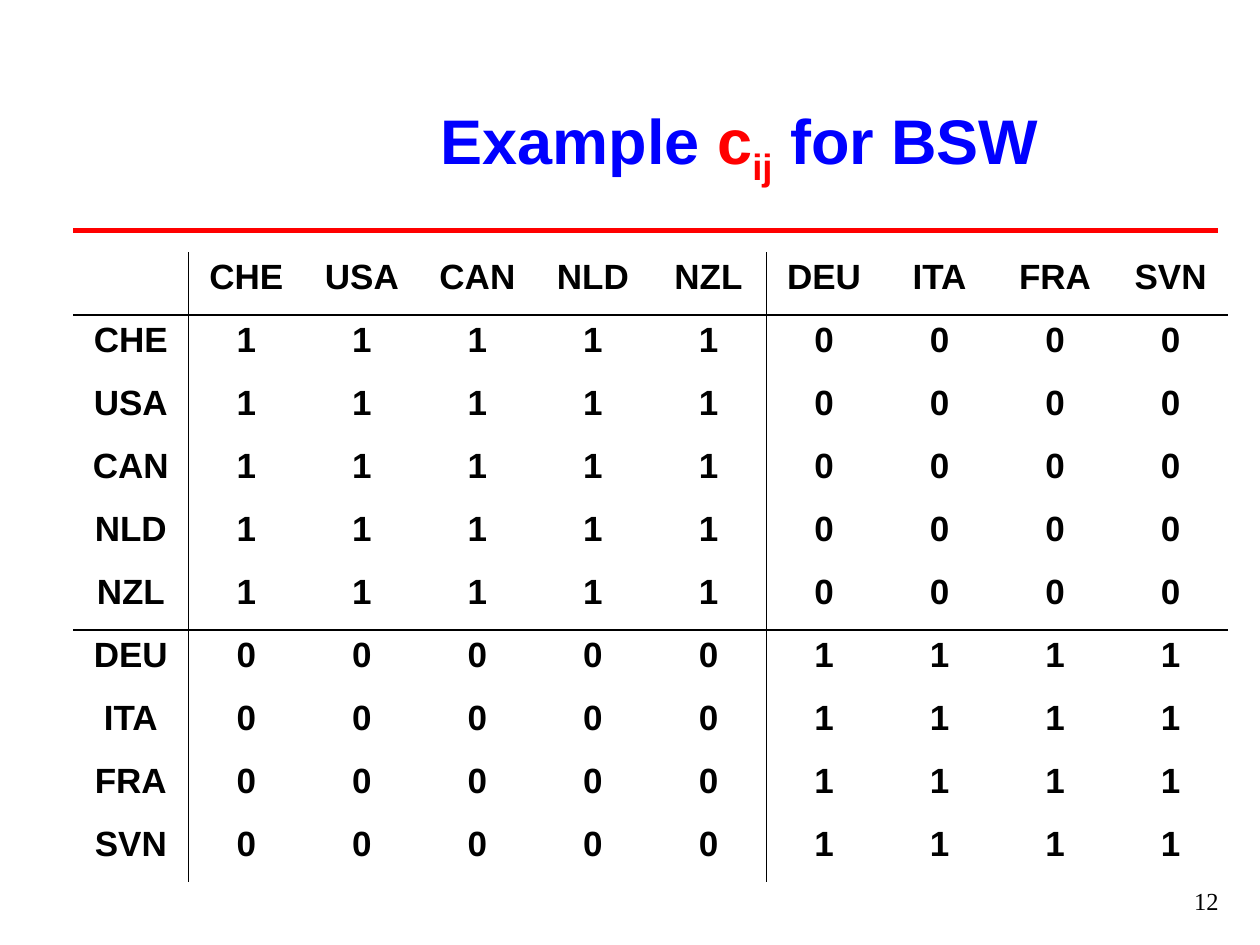
import pptx
import pptx.dml.color
import pptx.enum.shapes
import pptx.enum.text
import pptx.oxml
import pptx.oxml.ns
import pptx.util
from lxml import etree

Inches = pptx.util.Inches
Pt = pptx.util.Pt
ALIGN = pptx.enum.text.PP_ALIGN
ANCHOR = pptx.enum.text.MSO_ANCHOR
qn = pptx.oxml.ns.qn


def rgb(value):
    return pptx.dml.color.RGBColor.from_string(value)


class Deck:
    font = "Arial"
    black = "000000"
    blue = "0000FF"
    red = "FF0000"

    def __init__(self, width, height):
        self.prs = pptx.Presentation()
        self.prs.slide_width = Inches(width)
        self.prs.slide_height = Inches(height)
        self.s = self.prs.slides.add_slide(self.prs.slide_layouts[5])

    def style(self, p, size, align, font=font, color=black, bold=False):
        p.alignment = align
        p.font.name = font
        p.font.size = Pt(size)
        p.font.bold = bold
        p.font.color.rgb = rgb(color)

    def title(self, runs, x, y, w, h):
        sp = self.s.shapes.title
        sp.left, sp.top, sp.width, sp.height = map(Inches, (x, y, w, h))
        tf = sp.text_frame
        tf.word_wrap = True
        tf.auto_size = pptx.enum.text.MSO_AUTO_SIZE.NONE
        tf.vertical_anchor = ANCHOR.MIDDLE
        p = tf.paragraphs[0]
        self.style(p, 36, ALIGN.CENTER, bold=True)
        for text, color, baseline in runs:
            r = p.add_run()
            r.text = text
            r.font.color.rgb = rgb(color)
            if baseline:
                r._r.get_or_add_rPr().set("baseline", str(baseline * 1000))

    def rule(self, x1, x2, y):
        line = self.s.shapes.add_connector(
            pptx.enum.shapes.MSO_CONNECTOR.STRAIGHT,
            Inches(x1), Inches(y), Inches(x2), Inches(y))
        line.line.color.rgb = rgb(self.red)
        line.line.width = Pt(3)
        etree.SubElement(line._element.spPr, qn("a:effectLst"))

    def text(self, text, x, y, w, h):
        sp = self.s.shapes.add_textbox(*map(Inches, (x, y, w, h)))
        tf = sp.text_frame
        tf.word_wrap = True
        p = tf.paragraphs[0]
        p.text = text
        self.style(p, 14, ALIGN.RIGHT, font="Times New Roman")

    def border(self, cell, side, visible):
        ln = etree.SubElement(cell._tc.get_or_add_tcPr(), qn("a:ln" + side))
        if visible:
            ln.set("w", str(Pt(1)))
            fill = etree.SubElement(ln, qn("a:solidFill"))
            etree.SubElement(fill, qn("a:srgbClr")).set("val", self.black)
        else:
            etree.SubElement(ln, qn("a:noFill"))

    def table(self, rows, dividers, x, y, w, h):
        count = len(rows)
        table = self.s.shapes.add_table(
            count, len(rows[0]), *map(Inches, (x, y, w, h))).table
        table.first_row = False
        table.horz_banding = False
        for i, row in enumerate(rows):
            for j, text in enumerate(row):
                cell = table.cell(i, j)
                edges = {"L": j, "R": j + 1, "T": i, "B": i + 1}
                for side, edge in edges.items():
                    self.border(cell, side, edge in dividers)
                cell.fill.background()
                p = cell.text_frame.paragraphs[0]
                p.text = text
                self.style(p, 20, ALIGN.CENTER, bold=True)

    def save(self):
        self.prs.save("out.pptx")


def main():
    groups = [["CHE", "USA", "CAN", "NLD", "NZL"], ["DEU", "ITA", "FRA", "SVN"]]
    countries = [(name, group) for group in groups for name in group]
    rows = [[""] + [name for name, _ in countries]]
    for name, group in countries:
        rows.append([name] + ["1" if other in group else "0" for other, _ in countries])

    deck = Deck(10, 7.5)
    deck.rule(0.58, 9.67, 1.83)
    deck.text("12", 7.44, 6.98, 2.33, 0.52)
    deck.title([("Example ", deck.blue, 0), ("c", deck.red, 0),
                ("ij", deck.red, -25), (" for BSW", deck.blue, 0)],
               2.72, 0.52, 6.3, 1.25)
    deck.table(rows, {1, 1 + len(groups[0])}, 0.58, 2, 9.17, 5)
    deck.save()


if __name__ == "__main__":
    main()
